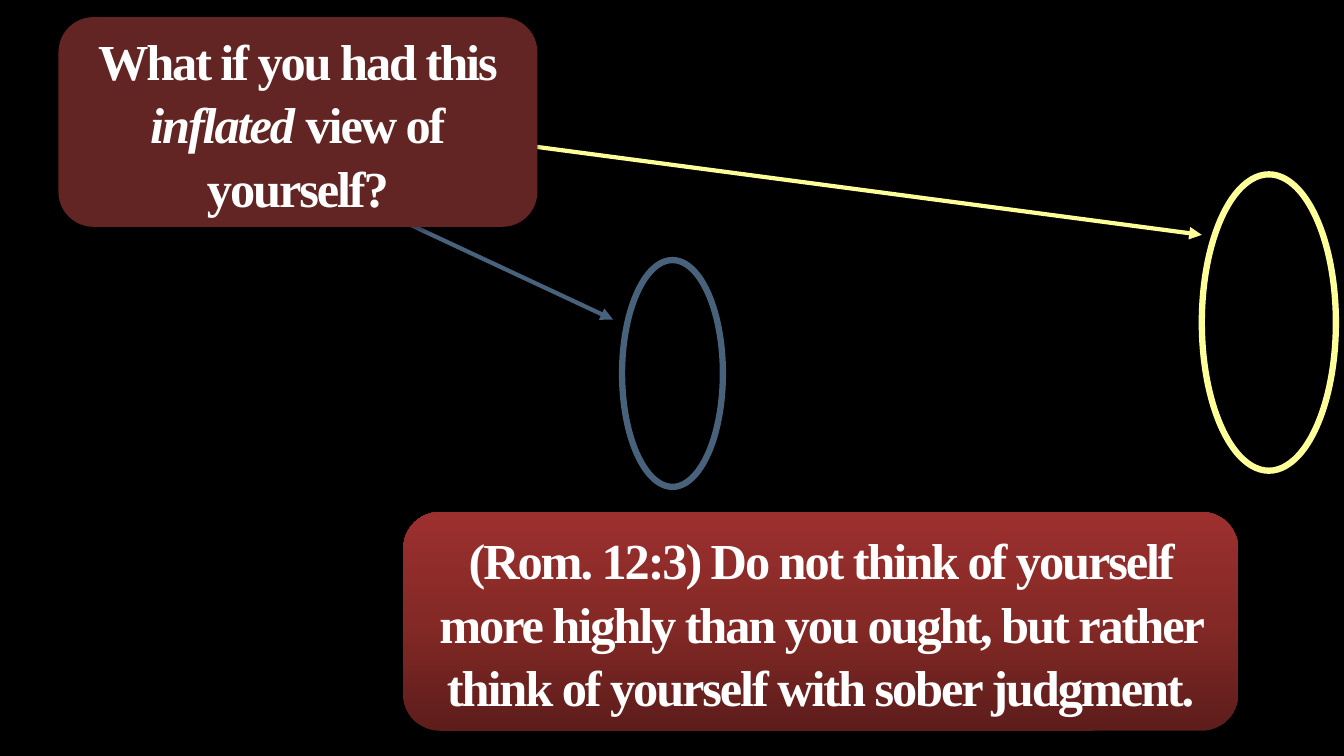
"""Builds a slide contrasting an inflated self-view with Romans 12:3."""
from copy import deepcopy
from dataclasses import dataclass

from lxml.etree import SubElement
from pptx import Presentation
from pptx.dml.color import RGBColor as RGB
from pptx.enum.shapes import MSO_CONNECTOR as CONNECTOR, MSO_SHAPE as SHAPE
from pptx.enum.text import MSO_ANCHOR as ANCHOR, PP_ALIGN as ALIGN
from pptx.oxml.ns import qn
from pptx.util import Inches, Pt


@dataclass(frozen=True)
class Theme:
    background: str = "000000"
    text: str = "FFFFFF"
    slate: str = "48627C"
    yellow: str = "FFFF99"
    question: tuple = ("632523",)
    verse: tuple = ("5D1D1B", "842926", "9C302E")
    font: str = "Times New Roman"
    size: float = 36
    tracking: float = -1.5
    leading: float = 1.05
    arrow: float = 3
    ring: float = 4.5


def add_text(paragraph, text, theme, italic=False):
    run = paragraph.add_run()
    run.text = text
    font = run.font
    font.name, font.size = theme.font, Pt(theme.size)
    font.bold, font.italic = True, italic
    font.color.rgb = RGB.from_string(theme.text)
    run._r.get_or_add_rPr().set("spc", str(int(theme.tracking * 100)))


class SlideBuilder:
    def __init__(self, slide, theme):
        self.slide, self.theme = slide, theme
        backdrop = slide.background.fill
        backdrop.solid()
        backdrop.fore_color.rgb = RGB.from_string(theme.background)

    def arrow(self, start, end, color):
        points = [Inches(value) for value in (*start, *end)]
        connector = self.slide.shapes.add_connector(CONNECTOR.STRAIGHT, *points)
        connector.line.color.rgb = RGB.from_string(color)
        connector.line.width = Pt(self.theme.arrow)
        SubElement(connector.line._get_or_add_ln(), qn("a:tailEnd"), type="triangle")
        SubElement(connector._element.spPr, qn("a:effectLst"))

    def shape(self, kind, bounds):
        shape = self.slide.shapes.add_shape(kind, *map(Inches, bounds))
        shape.shadow.inherit = False
        return shape

    def ring(self, bounds, color):
        ellipse = self.shape(SHAPE.OVAL, bounds)
        ellipse.fill.background()
        ellipse.line.color.rgb = RGB.from_string(color)
        ellipse.line.width = Pt(self.theme.ring)

    def card(self, bounds, colors, lines):
        card = self.shape(SHAPE.ROUNDED_RECTANGLE, bounds)
        card.line.fill.background()
        self.paint(card, colors)
        self.drop_shadow(card)
        frame = card.text_frame
        frame.word_wrap, frame.vertical_anchor = True, ANCHOR.MIDDLE
        for index, runs in enumerate(lines):
            paragraph = frame.add_paragraph() if index else frame.paragraphs[0]
            paragraph.alignment = ALIGN.CENTER
            paragraph.line_spacing = self.theme.leading
            for text, italic in runs:
                add_text(paragraph, text, self.theme, italic=italic)

    def paint(self, card, colors):
        if len(colors) == 1:
            card.fill.solid()
            card.fill.fore_color.rgb = RGB.from_string(colors[0])
            return
        card.fill.gradient()
        card.fill.gradient_angle = 90
        stops = card._element.spPr.find(".//" + qn("a:gsLst"))
        while len(stops) < len(colors):
            stops.append(deepcopy(stops[0]))
        for index, (stop, color) in enumerate(zip(card.fill.gradient_stops, colors)):
            stop.position = index / (len(colors) - 1)
            stop.color.rgb = RGB.from_string(color)

    def drop_shadow(self, card):
        effects = card._element.spPr.find(qn("a:effectLst"))
        shadow = SubElement(effects, qn("a:outerShdw"), blurRad=str(Pt(3.5)),
                            dist=str(Pt(2.2)), dir="5400000", rotWithShape="0")
        tint = SubElement(shadow, qn("a:srgbClr"), val=self.theme.background)
        SubElement(tint, qn("a:alpha"), val="32000")


def main():
    theme = Theme()
    deck = Presentation()
    deck.slide_width, deck.slide_height = Inches(13.33), Inches(7.5)
    builder = SlideBuilder(deck.slides.add_slide(deck.slide_layouts[6]), theme)

    builder.arrow((3, 1.73), (6.08, 3.17), theme.slate)
    builder.ring((6.17, 2.58, 1, 2.25), theme.slate)
    builder.arrow((5.04, 1.42), (11.92, 2.33), theme.yellow)
    builder.card((0.58, 0.17, 4.75, 2.08), theme.question, [
        [("What if you had this", False)],
        [("inflated", True), (" view of", False)],
        [("yourself?", False)],
    ])
    builder.ring((11.92, 1.73, 1.33, 2.94), theme.yellow)
    builder.card((4, 5.08, 8.28, 2.17), theme.verse, [
        [("(Rom. 12:3) Do not think of yourself more highly than you ought, "
          "but rather think of yourself with sober judgment.", False)],
    ])
    deck.save("out.pptx")


if __name__ == "__main__":
    main()
